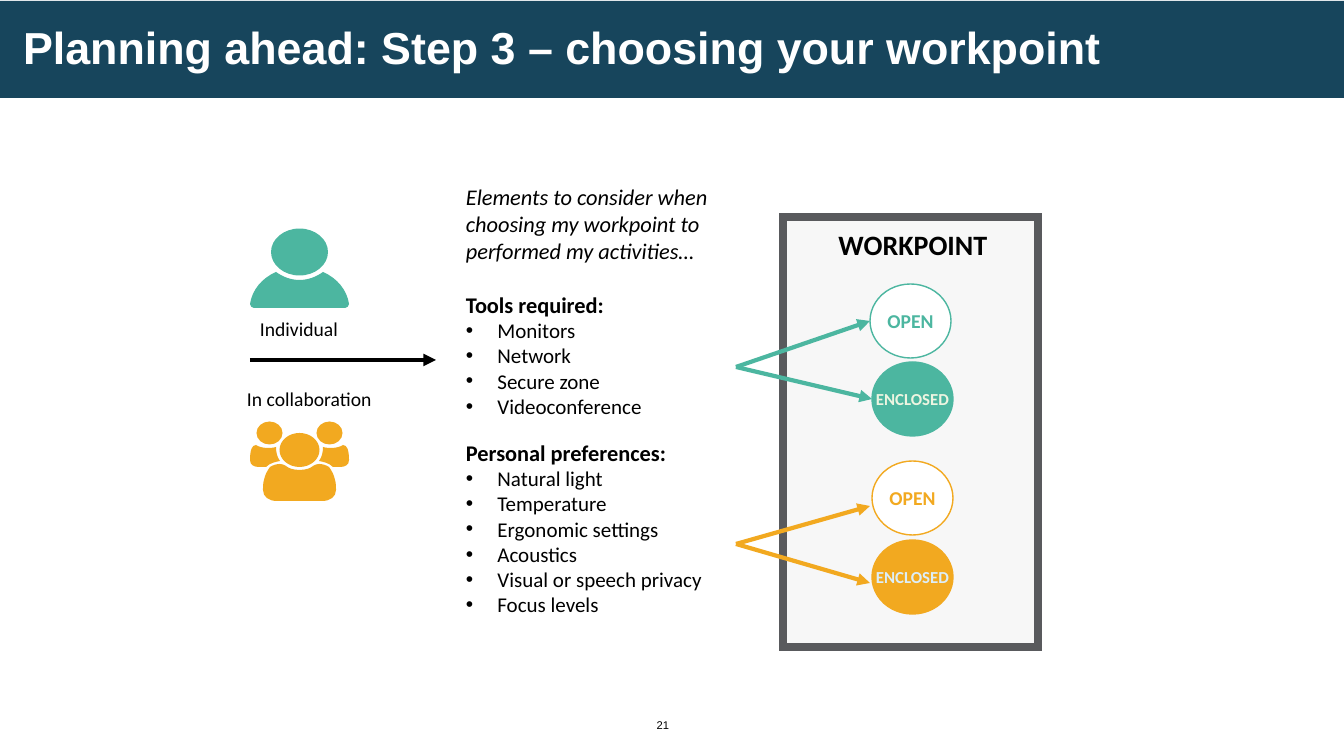
import pptx
import pptx.dml.color
import pptx.enum.shapes
import pptx.enum.text
import pptx.oxml
import pptx.oxml.ns
import pptx.util

SHAPES = pptx.enum.shapes.MSO_SHAPE
ALIGN = pptx.enum.text.PP_ALIGN
ANCHOR = pptx.enum.text.MSO_ANCHOR
SCALE = 914400 / 100.8
SIZE = (1344, 756)
TEAL, ORANGE, BLACK, WHITE = "4CB6A0", "F2A920", "000000", "FFFFFF"

TITLE = "Planning ahead: Step 3 – choosing your workpoint"
INTRO = "Elements to consider when choosing my workpoint to performed my activities…"
SECTIONS = [
    ("Tools required:", 19.5, ["Monitors", "Network", "Secure zone", "Videoconference"]),
    ("Personal preferences:", 14.6, ["Natural light", "Temperature", "Ergonomic settings",
                                     "Acoustics", "Visual or speech privacy", "Focus levels"]),
]
LABELS = [
    ("Individual", (250, 312, 112, 34), 14, False, ALIGN.LEFT),
    ("In collaboration", (237, 382, 173, 34), 14, False, ALIGN.LEFT),
    ("WORKPOINT", (808, 223, 210, 44), 20, True, ALIGN.CENTER),
]
FRAME = (783, 217, 255, 430)
OVAL_SIZE = (81, 74)
WORKPOINTS = [
    ("OPEN", 14, (870, 284), WHITE, TEAL, TEAL),
    ("ENCLOSED", 12, (872, 362), TEAL, TEAL, "EDF5E1"),
    ("OPEN", 14, (872, 461), WHITE, ORANGE, ORANGE),
    ("ENCLOSED", 12, (872, 540), ORANGE, ORANGE, "DDEEF7"),
]
ARROWS = [
    ((250, 360), (436, 360), BLACK),
    ((736, 367), (870, 321), TEAL),
    ((736, 367), (872, 399), TEAL),
    ((736, 544), (870, 506), ORANGE),
    ((736, 544), (870, 583), ORANGE),
]
ICON_AXIS = 299.5
PERSON_BODY = [
    (299.5, 280), (308, 280), (316, 277), (323, 272), (337, 278), (347, 290),
    (349, 304), (349, 306), (347, 308), (345, 308)]
LEADER_BODY = [
    (299.5, 470), (306, 470), (311, 468), (313, 466), (315, 465), (316, 464),
    (319, 464), (322, 464), (326, 465), (329, 467), (332, 471), (334, 475),
    (335, 480), (336, 483), (336, 487), (336, 490), (336, 497), (330, 501), (322, 501)]
MEMBER_BODY = [
    (343, 445), (339, 448), (329, 449), (323, 447), (323, 452), (322, 457),
    (319, 461), (324, 462), (329, 463), (333, 467), (333, 467), (340, 467),
    (340, 467), (345, 467), (349, 465), (349, 460), (349, 450), (347, 445), (343, 445)]
PERSON_HEAD = (ICON_AXIS, 252, 28.5, 23.5)
LEADER_HEAD = (ICON_AXIS, 450, 20, 17)
MEMBER_HEAD = (329.5, 433, 13, 11.5)


def px(value):
    return pptx.util.Emu(round(value * SCALE))


def color(code):
    return pptx.dml.color.RGBColor.from_string(code)


def element(tag, attributes="", inner=""):
    space = pptx.oxml.ns.nsdecls("a")
    return pptx.oxml.parse_xml(f"<a:{tag} {space} {attributes}>{inner}</a:{tag}>")


def paint(shape, fill, line=None, width=1):
    shape.shadow.inherit = False
    shape.fill.solid()
    shape.fill.fore_color.rgb = color(fill)
    if line:
        shape.line.color.rgb = color(line)
        shape.line.width = pptx.util.Pt(width)
        shape.line._get_or_add_ln().append(element("miter", 'lim="800000"'))
    else:
        shape.line.fill.background()


def add_span(para, text, size, tint=BLACK, bold=False, italic=False, face="Calibri"):
    span = para.add_run()
    span.text = text
    span.font.name = face
    span.font.size = pptx.util.Pt(size)
    span.font.bold = bold
    span.font.italic = italic
    span.font.color.rgb = color(tint)


def add_box(page, place):
    box = page.shapes.add_textbox(*map(px, place))
    box.text_frame.word_wrap = True
    return box.text_frame


def add_bullet(para):
    indent = pptx.util.Pt(22.5)
    props = para._p.get_or_add_pPr()
    props.set("marL", str(indent))
    props.set("indent", str(-indent))
    props.append(element("buClr", "", f'<a:srgbClr val="{BLACK}"/>'))
    props.append(element("buFont", 'typeface="Arial"'))
    props.append(element("buChar", 'char="•"'))


def add_arrow(page, start, end, tint):
    arrow = page.shapes.add_connector(
        pptx.enum.shapes.MSO_CONNECTOR.STRAIGHT, *map(px, start + end))
    arrow.line.color.rgb = color(tint)
    arrow.line.width = pptx.util.Pt(3)
    arrow.line._get_or_add_ln().append(element("tailEnd", 'type="triangle"'))
    arrow._element.spPr.append(element("effectLst"))


def mirror(points):
    return [(2 * ICON_AXIS - x, y) for x, y in reversed(points)]


def symmetric(half):
    other = mirror(half)
    return half + [half[-1], other[0]] + other


def ring(cx, cy, rx, ry):
    k = 0.55
    units = [(1, 0), (1, k), (k, 1), (0, 1), (-k, 1), (-1, k), (-1, 0),
             (-1, -k), (-k, -1), (0, -1), (k, -1), (1, -k), (1, 0)]
    return [(cx + rx * x, cy + ry * y) for x, y in units]


def add_icon(page, contours, tint):
    builder = None
    for contour in contours:
        points = [(px(x), px(y)) for x, y in contour]
        if builder is None:
            builder = page.shapes.build_freeform(*points[0])
        else:
            builder.move_to(*points[0])
        builder.add_line_segments(points[1:], close=True)
    icon = builder.convert_to_shape()
    paint(icon, tint)
    lines = list(icon._element.iter(pptx.oxml.ns.qn("a:lnTo")))
    for start in range(0, len(lines), 3):
        curve = element("cubicBezTo")
        lines[start].addprevious(curve)
        for line in lines[start:start + 3]:
            curve.append(line[0])
            line.getparent().remove(line)


def main():
    deck = pptx.Presentation()
    deck.slide_width, deck.slide_height = map(px, SIZE)
    page = deck.slides.add_slide(deck.slide_layouts[5])

    title = page.shapes.title
    title.left, title.top, title.width, title.height = map(px, (0, 1, 1344, 97))
    paint(title, "17455C")
    frame = title.text_frame
    frame.margin_left = px(23)
    frame.vertical_anchor = ANCHOR.MIDDLE
    frame.auto_size = pptx.enum.text.MSO_AUTO_SIZE.NONE
    para = frame.paragraphs[0]
    para.alignment = ALIGN.LEFT
    para.line_spacing = 0.9
    add_span(para, TITLE, 32, WHITE, bold=True, face="Arial")

    frame = add_box(page, (643, 712, 40, 27))
    frame.vertical_anchor = ANCHOR.MIDDLE
    frame.paragraphs[0].alignment = ALIGN.CENTER
    add_span(frame.paragraphs[0], "21", 8, face="Arial")

    member = [ring(*MEMBER_HEAD), MEMBER_BODY]
    add_icon(page, [symmetric(PERSON_BODY), ring(*PERSON_HEAD)], TEAL)
    add_icon(page, member + [mirror(part) for part in member]
             + [ring(*LEADER_HEAD), symmetric(LEADER_BODY)], ORANGE)

    frame = add_box(page, (456, 178, 311, 459))
    add_span(frame.paragraphs[0], INTRO, 16, italic=True)
    for heading, gap, items in SECTIONS:
        para = frame.add_paragraph()
        para.space_before = pptx.util.Pt(gap)
        add_span(para, heading, 16, bold=True)
        for item in items:
            para = frame.add_paragraph()
            add_bullet(para)
            add_span(para, item, 15)

    paint(page.shapes.add_shape(SHAPES.RECTANGLE, *map(px, FRAME)), "F7F7F7", "595A5D", 6)
    for text, place, size, bold, alignment in LABELS:
        para = add_box(page, place).paragraphs[0]
        para.alignment = alignment
        add_span(para, text, size, bold=bold)

    for text, size, corner, fill, line, tint in WORKPOINTS:
        oval = page.shapes.add_shape(SHAPES.OVAL, *map(px, corner + OVAL_SIZE))
        paint(oval, fill, line)
        frame = oval.text_frame
        frame.word_wrap = False
        frame.margin_left = frame.margin_right = 0
        frame.vertical_anchor = ANCHOR.MIDDLE
        frame.paragraphs[0].alignment = ALIGN.CENTER
        add_span(frame.paragraphs[0], text, size, tint, bold=True)

    for start, end, tint in ARROWS:
        add_arrow(page, start, end, tint)
    deck.save("out.pptx")


if __name__ == "__main__":
    main()
